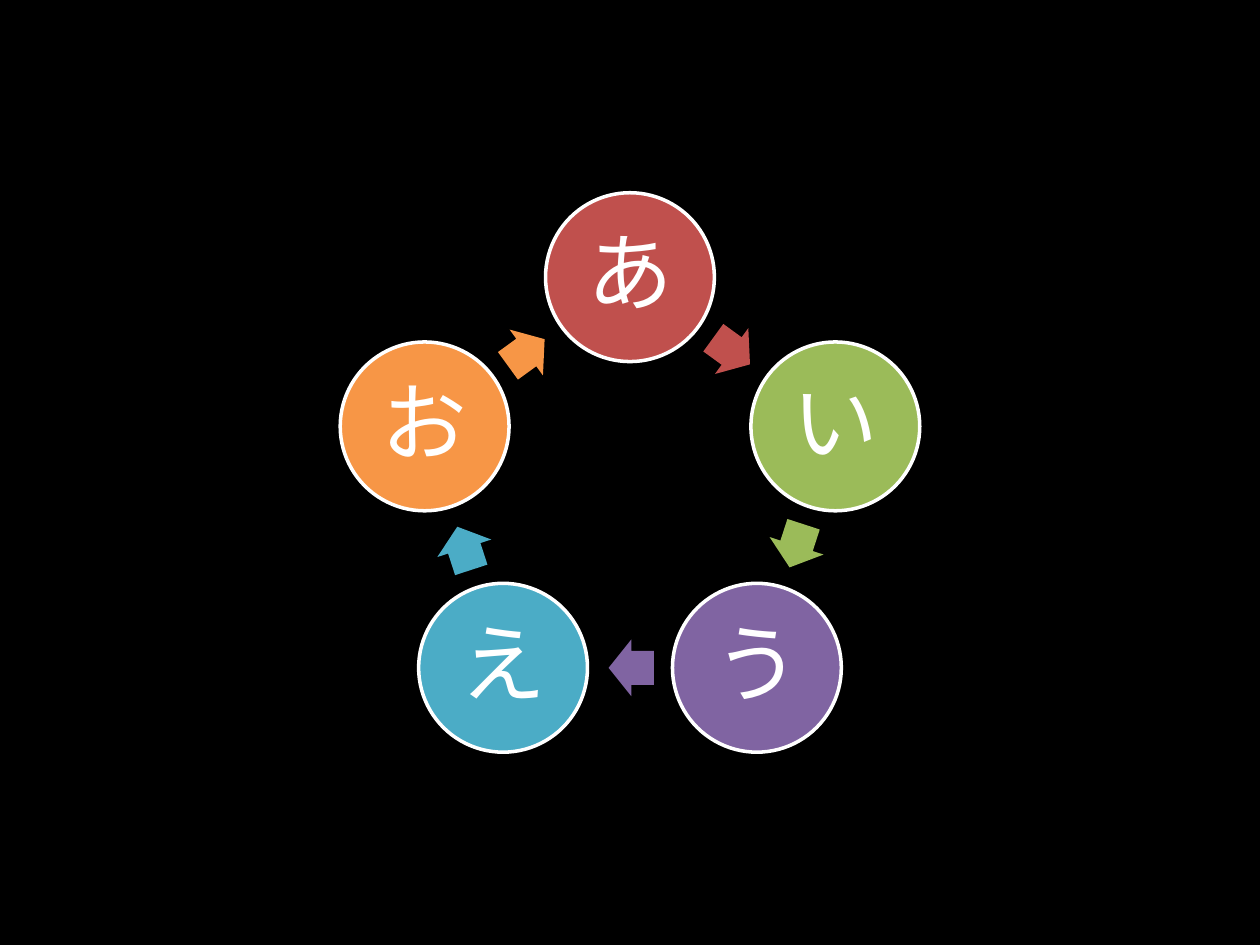
from dataclasses import dataclass
from math import cos, pi, radians, sin

from pptx import Presentation
from pptx.dml.color import RGBColor
from pptx.enum.shapes import MSO_SHAPE
from pptx.enum.text import MSO_ANCHOR, PP_ALIGN
from pptx.util import Inches, Pt


@dataclass(frozen=True)
class Theme:
    back: str = "000000"
    ink: str = "FFFFFF"
    font: str = "Calibri"
    size: int = 49
    rim: int = 2


THEME = Theme()
STEPS = [
    ("あ", "C0504D"),
    ("い", "9BBB59"),
    ("う", "8064A2"),
    ("え", "4BACC6"),
    ("お", "F79646"),
]
DISC = 1.34
ARROW = (0.36, 0.45)
LAG = 0.01  # arrows sit a touch behind the midpoint


def write(shape, text, *, size, color, font, inset=0.07, line=0.9, after=0.35):
    frame = shape.text_frame
    frame.word_wrap = True
    frame.vertical_anchor = MSO_ANCHOR.MIDDLE
    frame.margin_left = frame.margin_right = Inches(inset)
    frame.margin_top = frame.margin_bottom = Inches(inset)
    para = frame.paragraphs[0]
    para.alignment = PP_ALIGN.CENTER
    para.line_spacing = line
    para.space_after = Pt(size * after)
    run = para.add_run()
    run.text = text
    run.font.size = Pt(size)
    run.font.name = font
    run.font.color.rgb = RGBColor.from_string(color)


def draw(slide, kind, mid, size, color):
    """Add a flat filled shape centred on mid."""
    (x, y), (w, h) = mid, size
    shape = slide.shapes.add_shape(
        kind, Inches(x - w / 2), Inches(y - h / 2), Inches(w), Inches(h))
    shape.shadow.inherit = False
    shape.fill.solid()
    shape.fill.fore_color.rgb = RGBColor.from_string(color)
    shape.line.fill.background()
    return shape


def add_disc(slide, mid, text, color):
    disc = draw(slide, MSO_SHAPE.OVAL, mid, (DISC, DISC), color)
    disc.line.color.rgb = RGBColor.from_string(THEME.ink)
    disc.line.width = Pt(THEME.rim)
    write(disc, text, size=THEME.size, color=THEME.ink, font=THEME.font)


def add_arrow(slide, mid, turn, color):
    arrow = draw(slide, MSO_SHAPE.RIGHT_ARROW, mid, ARROW, color)
    arrow.adjustments[0] = 0.6
    arrow.adjustments[1] = 0.5
    arrow.rotation = turn


def add_cycle(slide, box, steps):
    """Spread the steps clockwise from the top of the box."""
    left, top, width, height = box
    step = 360 / len(steps)
    radius = (height - DISC) / (1 + cos(pi / len(steps)))
    hub_x, hub_y = left + width / 2, top + DISC / 2 + radius

    def place(angle, reach):
        turn = radians(angle)
        return hub_x + reach * sin(turn), hub_y - reach * cos(turn)

    for i, (text, color) in enumerate(steps):
        # Disc
        add_disc(slide, place(i * step, radius), text, color)
        # Arrow to the next disc
        turn = (i + 0.5) * step
        x, y = place(turn, radius * cos(pi / len(steps)))
        mid = x - LAG * cos(radians(turn)), y - LAG * sin(radians(turn))
        add_arrow(slide, mid, turn, color)


def main():
    deck = Presentation()
    deck.slide_width, deck.slide_height = Inches(10), Inches(7.5)
    slide = deck.slides.add_slide(deck.slide_layouts[6])
    fill = slide.background.fill
    fill.solid()
    fill.fore_color.rgb = RGBColor.from_string(THEME.back)
    add_cycle(slide, (2, 1.53, 6, 4.44), STEPS)
    deck.save("out.pptx")


if __name__ == "__main__":
    main()
